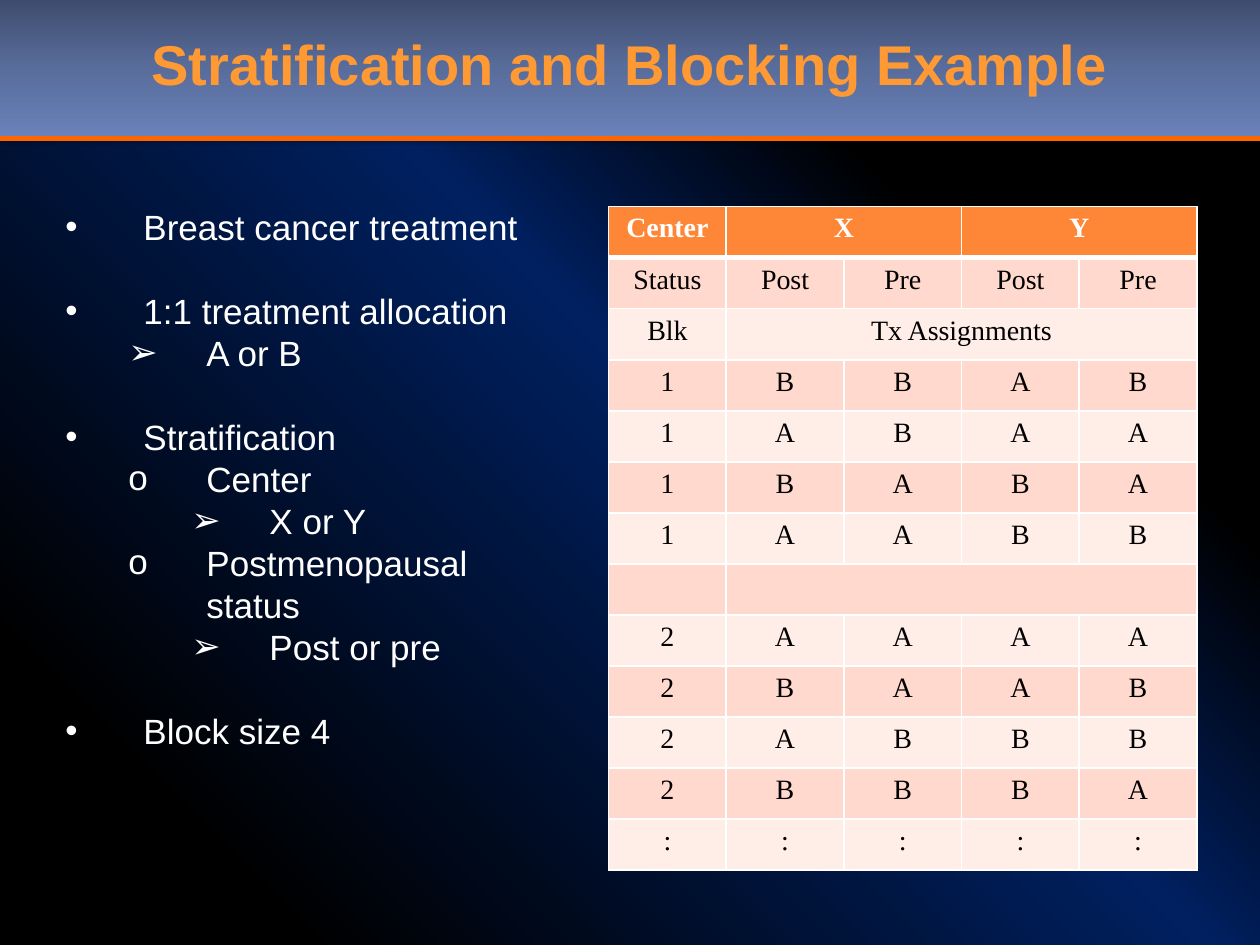
from dataclasses import dataclass

import pptx
import pptx.dml.color
import pptx.enum.shapes
import pptx.enum.text
import pptx.oxml
import pptx.oxml.ns
import pptx.util
from pptx.util import Inches

NAMESPACE = pptx.oxml.ns.nsdecls("a")
CENTER = pptx.enum.text.PP_ALIGN.CENTER
MIDDLE = pptx.enum.text.MSO_ANCHOR.MIDDLE
HEADER_HEIGHT = 1.09
WHITE = "FFFFFF"
BLACK = "000000"
HEADER_FILL = "FE8637"
BAND_FILLS = ("FFEDE8", "FFD9CE")


@dataclass
class Bullet:
    text: str
    level: int = 0
    mark: str = "•"
    starts_group: bool = False


BULLETS = [
    Bullet("Breast cancer treatment"),
    Bullet("1:1 treatment allocation", starts_group=True),
    Bullet("A or B", 1, "➢"),
    Bullet("Stratification", starts_group=True),
    Bullet("Center", 1, "o"),
    Bullet("X or Y", 2, "➢"),
    Bullet("Postmenopausal status", 1, "o"),
    Bullet("Post or pre", 2, "➢"),
    Bullet("Block size 4", starts_group=True),
]

# None continues the cell to its left.
TABLE_ROWS = [
    ["Center", "X", None, "Y", None],
    ["Status", "Post", "Pre", "Post", "Pre"],
    ["Blk", "Tx Assignments", None, None, None],
    list("1BBAB"),
    list("1ABAA"),
    list("1BABA"),
    list("1AABB"),
    ["", "", None, None, None],
    list("2AAAA"),
    list("2BAAB"),
    list("2ABBB"),
    list("2BBBA"),
    list(":::::"),
]


def color(value: str) -> pptx.dml.color.RGBColor:
    return pptx.dml.color.RGBColor.from_string(value)


def apply_gradient(fill, properties, stops: list[tuple[int, str]], angle: int) -> None:
    """Fill with percent stops; the angle runs clockwise in degrees."""
    fill.gradient()
    gradient = properties.find(pptx.oxml.ns.qn("a:gradFill"))
    stop_xml = "".join(
        f'<a:gs pos="{percent * 1000}"><a:srgbClr val="{value}"/></a:gs>' for percent, value in stops
    )
    properties.replace(gradient, pptx.oxml.parse_xml(
        f'<a:gradFill {NAMESPACE} rotWithShape="1"><a:gsLst>{stop_xml}</a:gsLst>'
        f'<a:lin ang="{angle * 60000}" scaled="0"/></a:gradFill>'
    ))


def shadow_effect(blur: float, distance: float, opacity: int, angle: int):
    return pptx.oxml.parse_xml(
        f'<a:effectLst {NAMESPACE}><a:outerShdw blurRad="{pptx.util.Pt(blur)}" '
        f'dist="{pptx.util.Pt(distance)}" dir="{angle * 60000}" algn="ctr" rotWithShape="0">'
        f'<a:srgbClr val="{BLACK}"><a:alpha val="{opacity * 1000}"/></a:srgbClr>'
        f'</a:outerShdw></a:effectLst>'
    )


def add_run(paragraph, text: str, size: int, font: str, value: str, bold: bool = False):
    run = paragraph.add_run()
    run.text = text
    run.font.size = pptx.util.Pt(size)
    run.font.bold = bold
    run.font.color.rgb = color(value)
    run.font.name = font
    return run


def add_header(slide) -> None:
    band = slide.shapes.add_shape(
        pptx.enum.shapes.MSO_SHAPE.RECTANGLE, 0, 0, Inches(10), Inches(HEADER_HEIGHT)
    )
    apply_gradient(band.fill, band._element.spPr,
                   [(0, "3E4D6E"), (50, "596D9C"), (100, "6982B9")], 90)
    band.line.fill.background()
    band._element.spPr.append(shadow_effect(3.1, 1.8, 35, 90))

    rule = slide.shapes.add_connector(
        pptx.enum.shapes.MSO_CONNECTOR.STRAIGHT, 0, Inches(1.1), Inches(10), Inches(1.1)
    )
    rule.line.color.rgb = color("FF6600")
    rule.line.width = pptx.util.Pt(3)
    rule._element.spPr.append(pptx.oxml.parse_xml(f"<a:effectLst {NAMESPACE}/>"))

    title = slide.shapes.add_textbox(0, 0, Inches(10), Inches(HEADER_HEIGHT))
    title.text_frame.word_wrap = True
    title.text_frame.vertical_anchor = MIDDLE
    paragraph = title.text_frame.paragraphs[0]
    paragraph.alignment = CENTER
    paragraph.line_spacing = 0.85
    run = add_run(paragraph, "Stratification and Blocking Example", 32, "Arial", "FF9933", True)
    text_fill = run.font._element.find(pptx.oxml.ns.qn("a:solidFill"))
    text_fill.addnext(shadow_effect(0, 2.8, 100, 45))


def add_bullets(slide, bullets: list[Bullet]) -> None:
    box = slide.shapes.add_textbox(Inches(0.42), Inches(1.58), Inches(4.08), Inches(4.81))
    box.text_frame.word_wrap = True
    for index, bullet in enumerate(bullets):
        paragraph = box.text_frame.paragraphs[0] if index == 0 else box.text_frame.add_paragraph()
        paragraph.level = bullet.level
        paragraph.line_spacing = pptx.util.Pt(24)
        if bullet.starts_group:
            paragraph.space_before = pptx.util.Pt(24)
        properties = paragraph._element.get_or_add_pPr()
        properties.set("marL", str(Inches(0.62 + 0.5 * bullet.level)))
        properties.set("indent", str(Inches(-0.62)))
        properties.append(pptx.oxml.parse_xml(f'<a:buFont {NAMESPACE} typeface="Arial"/>'))
        properties.append(pptx.oxml.parse_xml(f'<a:buChar {NAMESPACE} char="{bullet.mark}"/>'))
        add_run(paragraph, bullet.text, 20, "Arial", WHITE)


def set_borders(cell, top: int, bottom: int) -> None:
    """Draw white cell borders, with top and bottom widths in points."""
    properties = cell._tc.get_or_add_tcPr()
    for position, (side, width) in enumerate((("L", 1), ("R", 1), ("T", top), ("B", bottom))):
        properties.insert(position, pptx.oxml.parse_xml(
            f'<a:ln{side} {NAMESPACE} w="{pptx.util.Pt(width)}"><a:solidFill>'
            f'<a:srgbClr val="{WHITE}"/></a:solidFill></a:ln{side}>'
        ))


def add_assignment_table(slide, rows: list[list]) -> None:
    column_count = len(rows[0])
    table = slide.shapes.add_table(
        len(rows), column_count, Inches(4.83), Inches(1.64), Inches(4.67), Inches(5.27)
    ).table
    for row_index, row in enumerate(rows):
        is_header = row_index == 0
        for column_index, text in enumerate(row):
            cell = table.cell(row_index, column_index)
            cell.fill.solid()
            cell.fill.fore_color.rgb = color(HEADER_FILL if is_header else BAND_FILLS[row_index % 2])
            set_borders(cell, top=3 if row_index == 1 else 1, bottom=3 if is_header else 1)
            if text is None:
                continue
            end = column_index
            while end + 1 < column_count and row[end + 1] is None:
                end += 1
            if end > column_index:
                cell.merge(table.cell(row_index, end))
            if text:
                paragraph = cell.text_frame.paragraphs[0]
                paragraph.alignment = CENTER
                add_run(paragraph, text, 16, "Times New Roman", WHITE if is_header else BLACK, is_header)


def main() -> None:
    presentation = pptx.Presentation()
    presentation.slide_width = Inches(10)
    presentation.slide_height = Inches(7.5)
    slide = presentation.slides.add_slide(presentation.slide_layouts[6])
    background_fill = slide.background.fill
    apply_gradient(background_fill, slide._element.cSld.bg.bgPr,
                   [(14, BLACK), (55, "002060"), (75, BLACK)], 315)
    add_header(slide)
    add_assignment_table(slide, TABLE_ROWS)
    add_bullets(slide, BULLETS)
    presentation.save("out.pptx")


if __name__ == "__main__":
    main()
